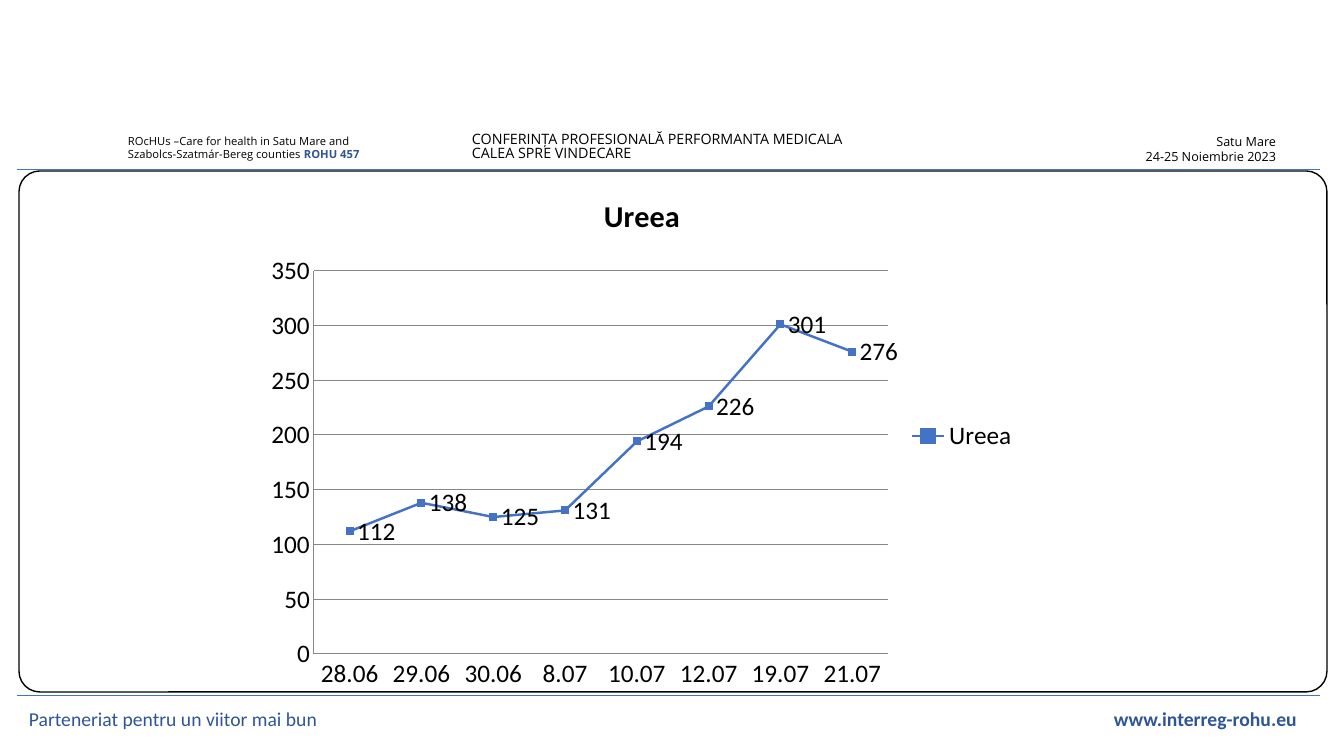
from lxml import etree
from pptx import Presentation
from pptx import util as u
from pptx.chart.data import CategoryChartData
from pptx.dml.color import RGBColor
from pptx.enum import chart as charts, shapes, text
from pptx.oxml.ns import qn

BLACK = RGBColor(0, 0, 0)
BLUE = RGBColor(0x44, 0x72, 0xC4)
NAVY = RGBColor(0x2F, 0x55, 0x97)
GREY = RGBColor(0x87, 0x87, 0x87)

LEFT, RIGHT = text.PP_ALIGN.LEFT, text.PP_ALIGN.RIGHT

# box in px, size in points, alignment, line spacing, paragraphs of (words, highlighted)
HEADERS = [
    ((462, 129, 575, 40), 10.2, LEFT, 0.8,
     [[("CONFERINȚA PROFESIONALĂ PERFORMANTA MEDICALA", False)],
      [("CALEA SPRE VINDECARE", False)]]),
    ((1062, 129, 224, 40), 9, RIGHT, 1.0,
     [[("Satu Mare", False)], [("24-25 Noiembrie 2023", False)]]),
    ((118, 129, 343, 37), 8, LEFT, 1.0,
     [[("ROcHUs –Care for health in Satu Mare and", False)],
      [("Szabolcs-Szatmár-Bereg counties ", False), ("ROHU 457", True)]]),
]
RULES_Y = (169, 695)
RULE_X = (17, 1320)
FRAME = (19, 171, 1308, 521)
FOOTER = (19, 699, 1301, 40)
FOOTER_TAB = 1268
SLOGAN, WEBSITE = "Parteneriat pentru un viitor mai bun", "www.interreg-rohu.eu"

CHART = (256, 173, 772, 526)
SERIES = "Ureea"
UREA = {"28.06": 112, "29.06": 138, "30.06": 125, "8.07": 131,
        "10.07": 194, "12.07": 226, "19.07": 301, "21.07": 276}


def px(*lengths):
    return [round(length * 914400 / 100.8) for length in lengths]


def set_font(font, name, size, color, bold=False):
    font.name, font.size, font.bold = name, u.Pt(size), bold
    font.color.rgb = color


def add_text_frame(page, box):
    frame = page.shapes.add_textbox(*px(*box)).text_frame
    frame.word_wrap = True
    return frame


def add_header(page, box, size, align, spacing, paragraphs):
    frame = add_text_frame(page, box)
    for index, spans in enumerate(paragraphs):
        para = frame.add_paragraph() if index else frame.paragraphs[0]
        para.alignment, para.line_spacing = align, spacing
        set_font(para.font, "Open Sans", size, BLACK)
        for words, highlighted in spans:
            span = para.add_run()
            span.text = words
            set_font(span.font, "Open Sans", size,
                     NAVY if highlighted else BLACK, highlighted)


def add_rule(page, y):
    start, end = RULE_X
    rule = page.shapes.add_connector(shapes.MSO_CONNECTOR.STRAIGHT,
                                     *px(start, y, end, y))
    rule.line.color.rgb, rule.line.width = BLUE, u.Pt(0.5)
    etree.SubElement(rule._element.spPr, qn("a:effectLst"))


def add_frame(page):
    frame = page.shapes.add_shape(shapes.MSO_SHAPE.ROUNDED_RECTANGLE, *px(*FRAME))
    frame.adjustments[0] = 0.04
    frame.shadow.inherit = False
    frame.fill.background()
    frame.line.color.rgb, frame.line.width = BLACK, u.Pt(1)


def add_footer(page):
    """Slogan at the left and website at a right tab stop."""
    frame = add_text_frame(page, FOOTER)
    frame.vertical_anchor = text.MSO_ANCHOR.MIDDLE
    para = frame.paragraphs[0]
    tabs = etree.SubElement(para._p.get_or_add_pPr(), qn("a:tabLst"))
    etree.SubElement(tabs, qn("a:tab"), pos=str(px(FOOTER_TAB)[0]), algn="r")
    set_font(para.font, "Calibri", 14, NAVY)
    for words, bold in ((SLOGAN + "\t", False), (WEBSITE, True)):
        span = para.add_run()
        span.text = words
        set_font(span.font, "Calibri", 14, NAVY, bold)


def add_urea_chart(page):
    data = CategoryChartData()
    data.categories = list(UREA)
    data.add_series(SERIES, list(UREA.values()))
    chart = page.shapes.add_chart(charts.XL_CHART_TYPE.LINE_MARKERS_STACKED,
                                  *px(*CHART), data).chart
    set_font(chart.font, "Calibri", 18, BLACK)

    chart.has_title = True
    title = chart.chart_title.text_frame
    title.text = SERIES
    set_font(title.paragraphs[0].runs[0].font, "Calibri", 21.6, BLACK, True)

    chart.has_legend = True
    chart.legend.position = charts.XL_LEGEND_POSITION.RIGHT
    chart.legend.include_in_layout = False

    for axis in (chart.category_axis, chart.value_axis):
        axis.major_tick_mark = axis.minor_tick_mark = charts.XL_TICK_MARK.NONE
        axis.format.line.color.rgb = GREY
    grid = chart.value_axis.major_gridlines.format.line
    grid.color.rgb, grid.width = GREY, u.Pt(0.75)

    plot = chart.plots[0]
    plot.vary_by_categories = False
    series = plot.series[0]
    series.smooth = False
    series.format.line.color.rgb, series.format.line.width = BLUE, u.Pt(1.75)
    series.marker.style, series.marker.size = charts.XL_MARKER_STYLE.SQUARE, 5
    series.marker.format.fill.solid()
    series.marker.format.fill.fore_color.rgb = BLUE
    series.marker.format.line.color.rgb = BLUE
    labels = series.data_labels
    labels.show_value = True
    labels.position = charts.XL_LABEL_POSITION.RIGHT
    set_font(labels.font, "Calibri", 18, BLACK)


def main():
    deck = Presentation()
    deck.slide_width, deck.slide_height = px(1344, 756)
    page = deck.slides.add_slide(deck.slide_layouts[6])
    for header in HEADERS:
        add_header(page, *header)
    for y in RULES_Y:
        add_rule(page, y)
    add_frame(page)
    add_footer(page)
    add_urea_chart(page)
    deck.save("out.pptx")


if __name__ == "__main__":
    main()
